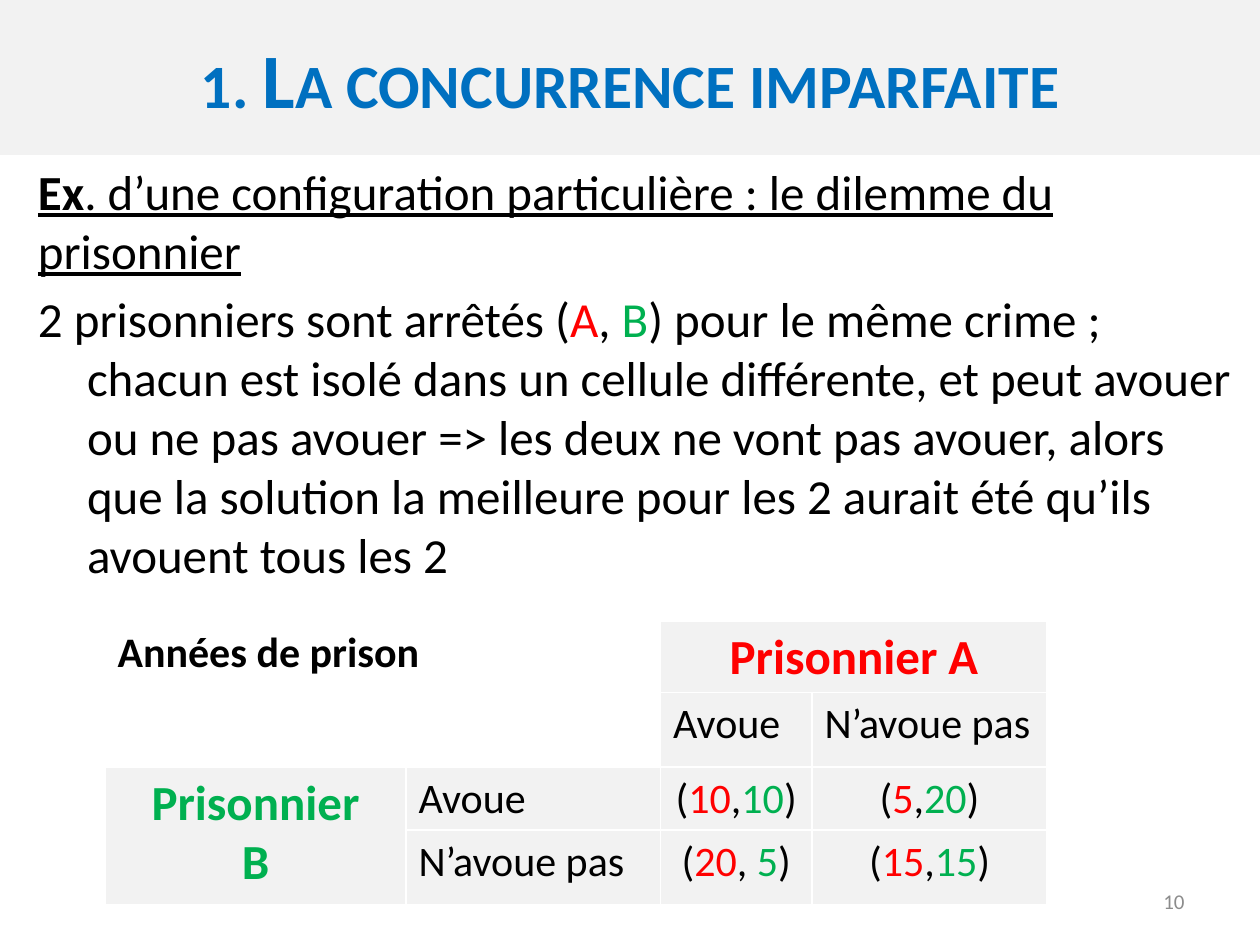
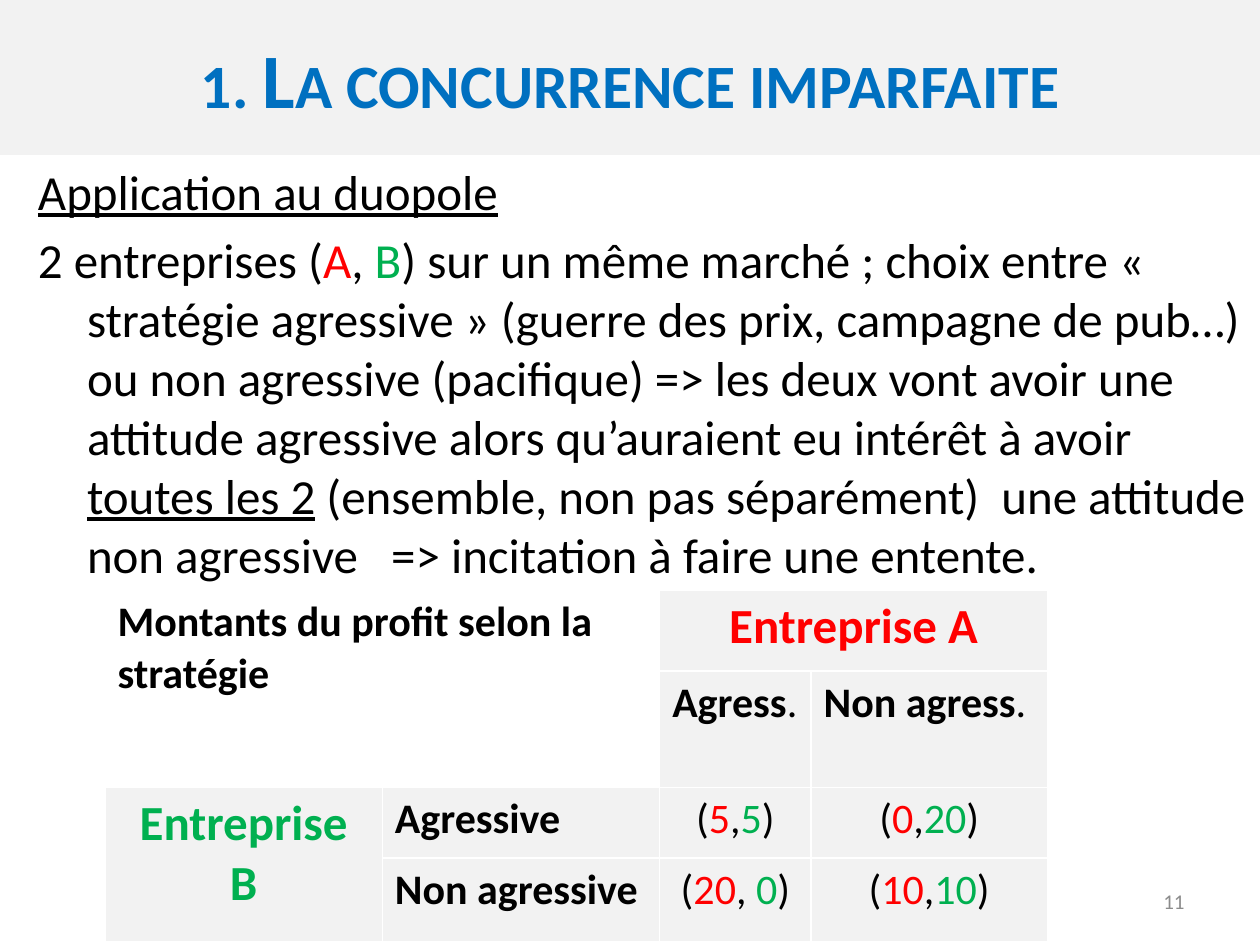
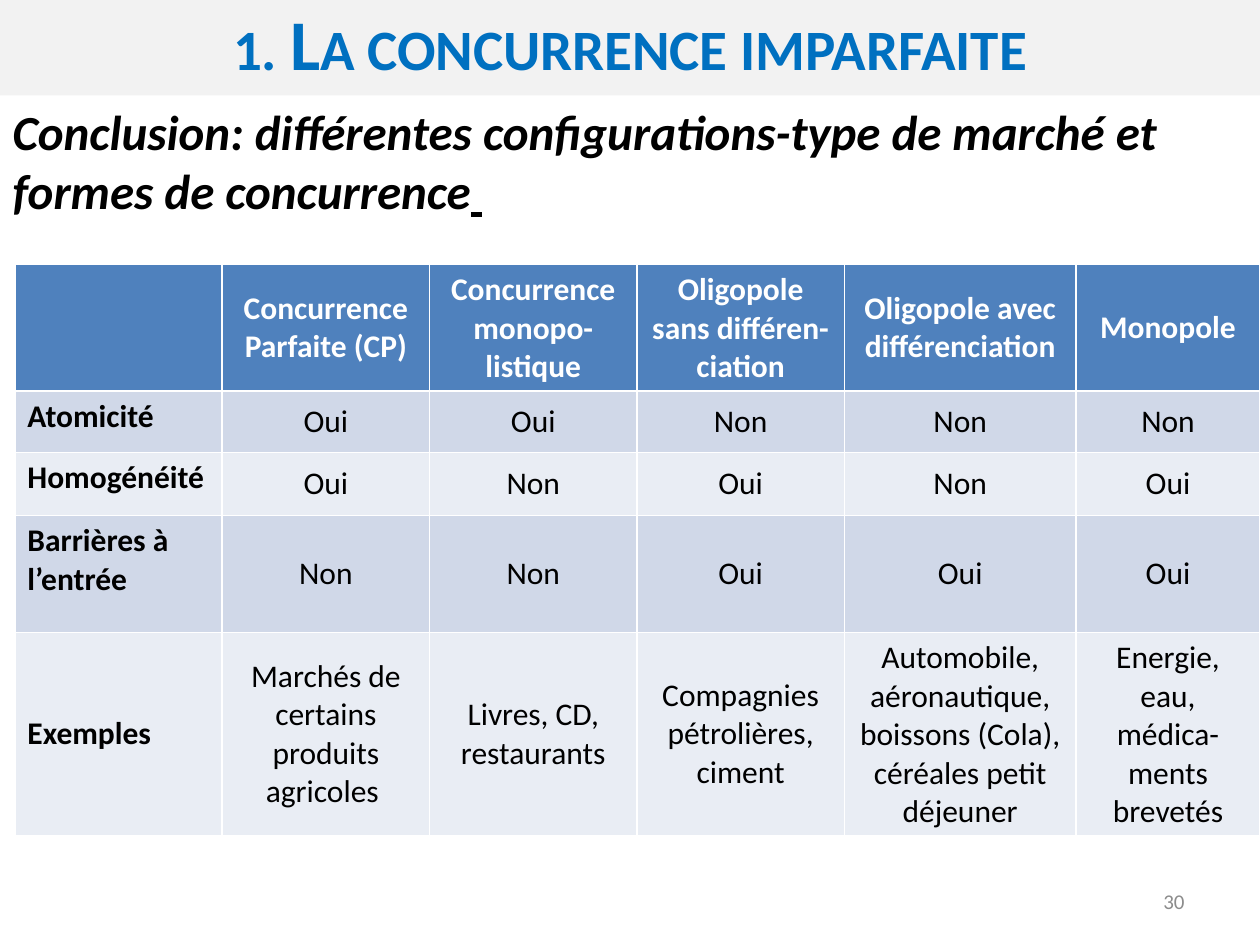
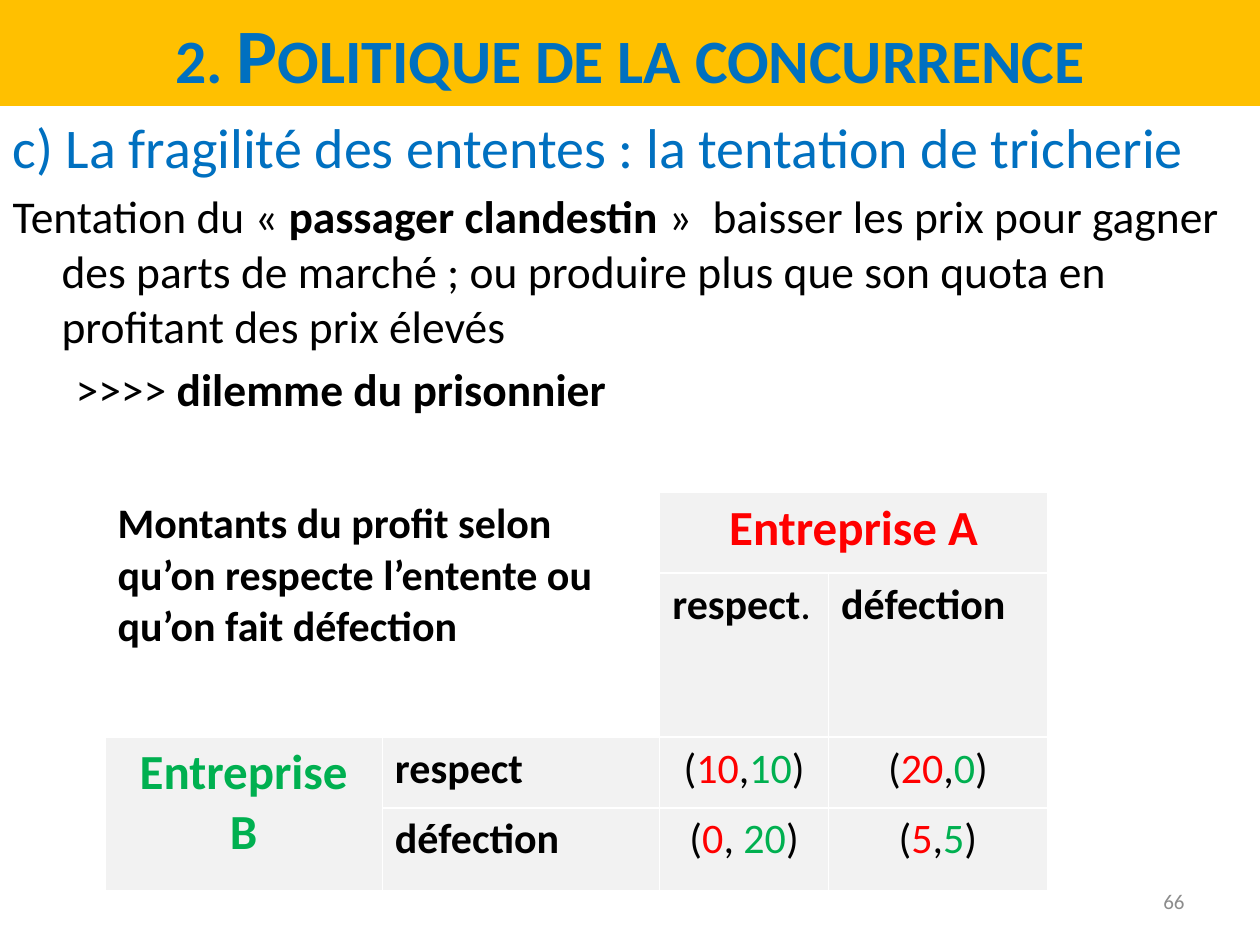
from pptx import Presentation
from pptx.dml.color import RGBColor
from pptx.enum.text import MSO_ANCHOR as Anchor, MSO_AUTO_SIZE as AutoSize, PP_ALIGN as Align
from pptx.util import Pt

FONT = "Calibri"
BLACK, WHITE, GREY_TEXT = "000000", "FFFFFF", "8C8C8C"
BLUE, RED, GREEN = "0070C0", "FF0000", "00B050"
LIGHT_GREY, GOLD = "F2F2F2", "FFC000"
HEADER_BLUE, BAND_COLORS = "4F81BD", ("D0D8E8", "E9EDF4")

SLIDE_WIDTH, SLIDE_HEIGHT = 720, 540
HANGING = 28
TABLE_LEFT = 60

BOLD, UNDERLINE = {"bold": True}, {"underline": True}
PLAYERS = [("A", {"color": RED}), ", ", ("B", {"color": GREEN})]

IMPERFECT = "1. La concurrence imparfaite"

# A text is a list of runs: a plain string, or a (string, format) pair.
# A paragraph is (runs, options).
SLIDES = [
    {
        "title": IMPERFECT, "number": 10, "band_height": 88.5, "body_left": 14.5,
        "body": [
            ([("Ex", {"bold": True, "underline": True}),
              (". d’une configuration particulière : le dilemme du prisonnier", UNDERLINE)], {}),
            (["2 prisonniers sont arrêtés (", *PLAYERS,
              ") pour le même crime ; chacun est isolé dans un cellule différente, et peut "
              "avouer ou ne pas avouer => les deux ne vont pas avouer, alors que la solution "
              "la meilleure pour les 2 aurait été qu’ils avouent tous les 2"],
             {"left": HANGING}),
        ],
        "payoffs": {
            "caption": "Années de prison", "player": "Prisonnier", "top": 355,
            "columns": (172, 145.5, 86.5, 134.5), "rows": (40.5, 42.5, 36, 42.5),
            "a_choices": [["Avoue"], ["N’avoue pas"]],
            "b_choices": [["Avoue"], ["N’avoue pas"]],
            "values": [[("10", "10"), ("5", "20")], [("20", " 5"), ("15", "15")]],
        },
    },
    {
        "title": IMPERFECT, "number": 11, "band_height": 88.5, "body_left": 14.5,
        "body": [
            ([("Application au duopole", UNDERLINE)], {}),
            (["2 entreprises (", *PLAYERS,
              ") sur un même marché ; choix entre « stratégie agressive » (guerre des prix, "
              "campagne de pub…) ou non agressive (pacifique) => les deux vont avoir une "
              "attitude agressive alors qu’auraient eu intérêt à avoir ",
              ("toutes les 2", UNDERLINE),
              " (ensemble, non pas séparément)  une attitude non agressive   => incitation "
              "à faire une entente."], {"left": HANGING}),
        ],
        "payoffs": {
            "caption": "Montants du profit selon la stratégie", "player": "Entreprise",
            "top": 337.5,
            "columns": (158.5, 158.5, 86.5, 135), "rows": (46, 66.5, 40.5, 47.5),
            "a_choices": [[("Agress", BOLD), "."], [("Non agress", BOLD), "."]],
            "b_choices": [[("Agressive", BOLD)], [("Non agressive", BOLD)]],
            "values": [[("5", "5"), ("0", "20")], [("20", " 0"), ("10", "10")]],
        },
    },
    {
        "title": IMPERFECT, "number": 30, "band_height": 54.5, "body_left": 0,
        "title_size": 40.7, "title_spacing": 0.9,
        "body": [
            ([("Conclusion: différentes configurations-type de marché et formes de concurrence",
               {"bold": True, "italic": True}), (" ", UNDERLINE)], {}),
        ],
        "comparison": {
            "left": 8.5, "top": 151,
            "columns": (118.5, 118.5, 118.5, 118.5, 132.5, 105),
            "rows": (72.5, 35, 36, 67, 116),
            "cells": [
                ("", "Concurrence Parfaite (CP)", "Concurrence monopo-\nlistique",
                 "Oligopole sans différen-ciation", "Oligopole avec différenciation",
                 "Monopole"),
                ("Atomicité", "Oui", "Oui", "Non", "Non", "Non"),
                ("Homogénéité", "Oui", "Non", "Oui", "Non", "Oui"),
                ("Barrières à l’entrée", "Non", "Non", "Oui", "Oui", "Oui"),
                ("Exemples", "Marchés de certains produits agricoles ",
                 "Livres, CD, restaurants", "Compagnies pétrolières, ciment",
                 "Automobile, aéronautique, boissons (Cola), céréales petit déjeuner",
                 "Energie, eau, médica-ments brevetés"),
            ],
        },
    },
    {
        "title": "2. Politique de la concurrence", "number": 66, "band_height": 60.5,
        "body_left": 0, "band_color": GOLD,
        "body": [
            (["c) La fragilité des ententes : la tentation de tricherie"],
             {"left": 40, "first": -40, "size": 32, "color": BLUE}),
            (["Tentation du «", (" passager clandestin", BOLD),
              " »  baisser les prix pour gagner des parts de marché ; ou produire plus que "
              "son quota en profitant des prix élevés"],
             {"left": HANGING, "size": 26, "level": 1}),
            ([">>>> ", ("dilemme du prisonnier", BOLD)],
             {"left": 64, "size": 26, "level": 1}),
        ],
        "payoffs": {
            "caption": "Montants du profit selon qu’on respecte l’entente ou qu’on fait défection",
            "player": "Entreprise", "top": 281.5,
            "columns": (158.5, 158.5, 96.5, 125), "rows": (46, 93.5, 40.5, 47.5),
            "a_choices": [[("respect", BOLD), "."], [("défection", BOLD)]],
            "b_choices": [[("respect", BOLD)], [("défection", BOLD)]],
            "values": [[("10", "10"), ("20", "0")], [("0", " 20"), ("5", "5")]],
        },
    },
]


def rgb(color):
    return RGBColor.from_string(color)


def fill_solid(target, color):
    target.fill.solid()
    target.fill.fore_color.rgb = rgb(color)


def place(shape, left, top, width, height):
    shape.left, shape.top, shape.width, shape.height = map(Pt, (left, top, width, height))


def add_run(paragraph, text, size, color=BLACK, bold=False, italic=False, underline=False,
            small_caps=False):
    run = paragraph.add_run()
    run.text = text
    font = run.font
    font.name, font.size, font.color.rgb = FONT, Pt(size), rgb(color)
    font.bold, font.italic, font.underline = bold, italic, underline
    if small_caps:
        run._r.get_or_add_rPr().set("cap", "small")


def write(paragraph, runs, align=Align.LEFT, **text_format):
    """Fill a paragraph with runs; each run may override the shared format."""
    paragraph.alignment = align
    for run in runs:
        text, own_format = (run, {}) if isinstance(run, str) else run
        add_run(paragraph, text, **{**text_format, **own_format})


def indent(paragraph, left, first):
    properties = paragraph._p.get_or_add_pPr()
    properties.set("marL", str(Pt(left)))
    properties.set("indent", str(Pt(first)))


def next_paragraph(frame, index):
    return frame.add_paragraph() if index else frame.paragraphs[0]


def add_title(slide, content):
    title = slide.shapes.title
    place(title, 0, 0, SLIDE_WIDTH, content["band_height"])
    fill_solid(title, content.get("band_color", LIGHT_GREY))
    frame = title.text_frame
    frame.vertical_anchor, frame.auto_size = Anchor.MIDDLE, AutoSize.NONE
    paragraph = frame.paragraphs[0]
    write(paragraph, [content["title"]], Align.CENTER, size=content.get("title_size", 44),
          color=BLUE, bold=True, small_caps=True)
    if "title_spacing" in content:
        paragraph.line_spacing = content["title_spacing"]


def add_body(slide, content):
    body = slide.placeholders[1]
    left, top = content["body_left"], content["band_height"]
    place(body, left, top, SLIDE_WIDTH - left, SLIDE_HEIGHT - top)
    frame = body.text_frame
    frame.vertical_anchor, frame.auto_size = Anchor.TOP, AutoSize.NONE
    for index, (runs, options) in enumerate(content["body"]):
        paragraph = next_paragraph(frame, index)
        paragraph.level = options.get("level", 0)
        left = options.get("left", 0)
        indent(paragraph, left, options.get("first", -HANGING if left else 0))
        write(paragraph, runs, size=options.get("size", 28), color=options.get("color", BLACK))


def add_slide_number(slide, number):
    box = slide.shapes.add_textbox(Pt(516), Pt(500.5), Pt(168), Pt(29))
    frame = box.text_frame
    frame.word_wrap, frame.vertical_anchor = True, Anchor.MIDDLE
    write(frame.paragraphs[0], [str(number)], Align.RIGHT, size=12, color=GREY_TEXT)


def add_grid(slide, left, top, columns, rows):
    frame = slide.shapes.add_table(len(rows), len(columns), Pt(left), Pt(top),
                                   Pt(sum(columns)), Pt(sum(rows)))
    table = frame.table
    for column, width in zip(table.columns, columns):
        column.width = Pt(width)
    for row, height in zip(table.rows, rows):
        row.height = Pt(height)
    return table


def write_cell(cell, lines, anchor=Anchor.TOP, **text_format):
    """Write one paragraph for each list of runs in lines."""
    cell.vertical_anchor = anchor
    for index, runs in enumerate(lines):
        write(next_paragraph(cell.text_frame, index), runs, **text_format)


def add_payoff_table(slide, payoffs):
    table = add_grid(slide, TABLE_LEFT, payoffs["top"], payoffs["columns"], payoffs["rows"])
    for cell in table.iter_cells():
        fill_solid(cell, LIGHT_GREY)
    caption, player_a, player_b = table.cell(0, 0), table.cell(0, 2), table.cell(2, 0)
    caption.merge(table.cell(1, 1))
    player_a.merge(table.cell(0, 3))
    player_b.merge(table.cell(3, 0))
    fill_solid(caption, WHITE)

    player = payoffs["player"]
    write_cell(caption, [[payoffs["caption"]]], size=24, bold=True)
    write_cell(player_a, [[f"{player} A"]], align=Align.CENTER, size=28, color=RED, bold=True)
    write_cell(player_b, [[player], ["B"]], align=Align.CENTER, size=28, color=GREEN, bold=True)
    for index in range(2):
        write_cell(table.cell(1, index + 2), [payoffs["a_choices"][index]], size=24)
        write_cell(table.cell(index + 2, 1), [payoffs["b_choices"][index]], size=24)
    for row, pairs in enumerate(payoffs["values"], start=2):
        for column, (gain_a, gain_b) in enumerate(pairs, start=2):
            runs = ["(", (gain_a, {"color": RED}), ",", (gain_b, {"color": GREEN}), ")"]
            write_cell(table.cell(row, column), [runs], align=Align.CENTER, size=24)


def add_comparison_table(slide, comparison):
    cells = comparison["cells"]
    table = add_grid(slide, comparison["left"], comparison["top"],
                     comparison["columns"], comparison["rows"])
    for row, texts in enumerate(cells):
        is_header, is_last = row == 0, row == len(cells) - 1
        for column, text in enumerate(texts):
            cell = table.cell(row, column)
            is_label = column == 0
            fill_solid(cell, HEADER_BLUE if is_header else BAND_COLORS[(row - 1) % 2])
            if text:
                write_cell(cell, [[line] for line in text.split("\n")],
                           anchor=Anchor.TOP if is_label and not is_last else Anchor.MIDDLE,
                           align=Align.LEFT if is_label else Align.CENTER, size=18,
                           color=WHITE if is_header else BLACK, bold=is_header or is_label)


def main():
    presentation = Presentation()
    presentation.slide_width, presentation.slide_height = Pt(SLIDE_WIDTH), Pt(SLIDE_HEIGHT)
    for content in SLIDES:
        slide = presentation.slides.add_slide(presentation.slide_layouts[0])
        add_body(slide, content)
        add_slide_number(slide, content["number"])
        add_title(slide, content)
        if "payoffs" in content:
            add_payoff_table(slide, content["payoffs"])
        else:
            add_comparison_table(slide, content["comparison"])
    presentation.save("out.pptx")


if __name__ == "__main__":
    main()
